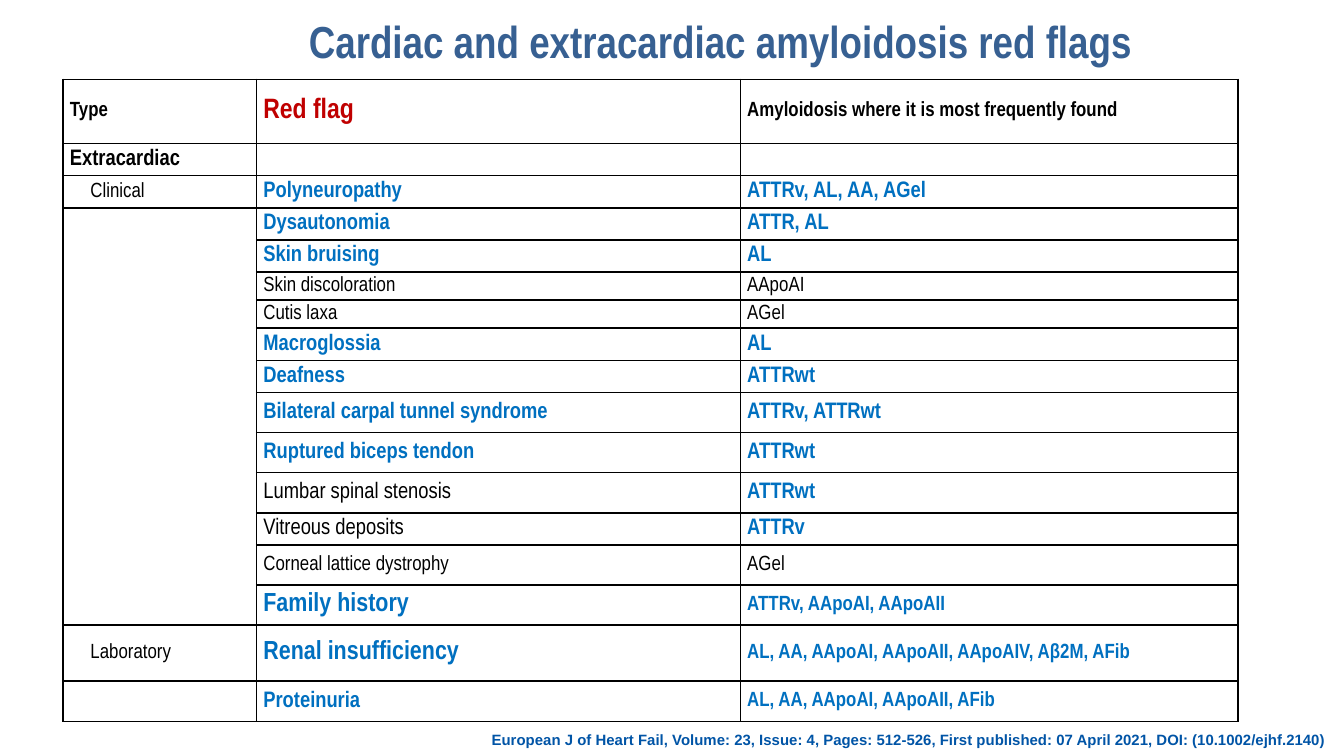
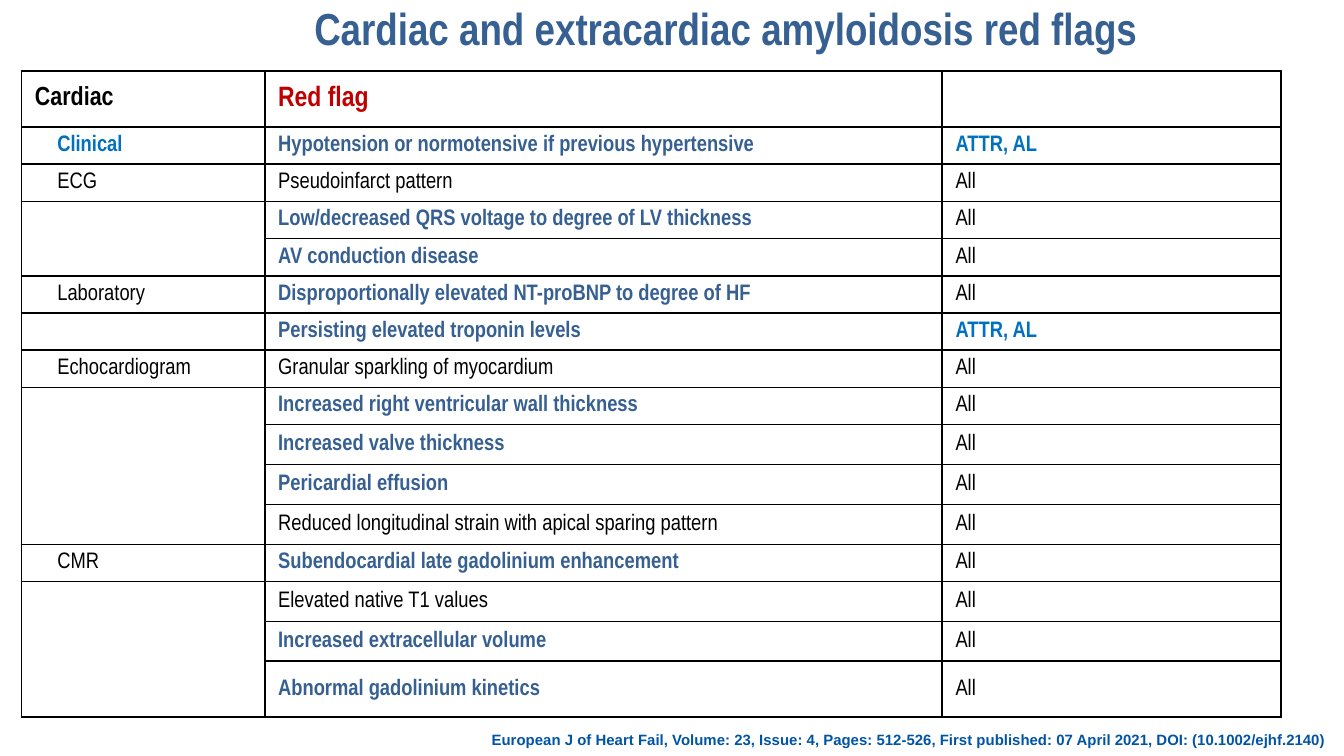
from collections import namedtuple
from itertools import groupby

from lxml import etree
from pptx import Presentation
from pptx.dml.color import RGBColor
from pptx.enum.text import MSO_ANCHOR, PP_ALIGN
from pptx.oxml.ns import qn
from pptx.util import Inches, Pt

MIDDLE, TOP = MSO_ANCHOR.MIDDLE, MSO_ANCHOR.TOP
CENTER, RIGHT = PP_ALIGN.CENTER, PP_ALIGN.RIGHT

BLACK = RGBColor(0x00, 0x00, 0x00)
WHITE = RGBColor(0xFF, 0xFF, 0xFF)
NAVY = RGBColor(0x37, 0x60, 0x92)
BLUE = RGBColor(0x00, 0x70, 0xC0)
RED = RGBColor(0xC0, 0x00, 0x00)
CITATION_BLUE = RGBColor(0x00, 0x54, 0xA6)

NARROW = "Arial Narrow"
TITLE = "Cardiac and extracardiac amyloidosis red flags"
CITATION = ("European J of Heart Fail, Volume: 23, Issue: 4, Pages: 512-526, "
            "First published: 07 April 2021, DOI: (10.1002/ejhf.2140)")

Entry = namedtuple("Entry", "text size color bold indented")


def plain(text, size=12):
    """Describe a regular black entry."""
    return Entry(text, size, BLACK, False, False)


def strong(text, size=12, color=BLUE):
    """Describe a bold entry."""
    return Entry(text, size, color, True, False)


def group(text, size=12):
    """Describe an indented group label."""
    return plain(text, size)._replace(indented=True)


def navy(text):
    """Describe a bold navy red flag."""
    return strong(text, color=NAVY)


ALL = plain("All")

EXTRACARDIAC = [
    (0.48, strong("Type", 11, BLACK), strong("Red flag", 15, RED),
     strong("Amyloidosis where it is most frequently found", 11, BLACK)),
    (0.24, strong("Extracardiac", 12, BLACK), None, None),
    (0.24, group("Clinical", 11), strong("Polyneuropathy"), strong("ATTRv, AL, AA, AGel")),
    (0.24, None, strong("Dysautonomia"), strong("ATTR, AL")),
    (0.24, None, strong("Skin bruising"), strong("AL")),
    (0.21, None, plain("Skin discoloration", 11), plain("AApoAI", 11)),
    (0.21, None, plain("Cutis laxa", 11), plain("AGel", 11)),
    (0.24, None, strong("Macroglossia"), strong("AL")),
    (0.24, None, strong("Deafness"), strong("ATTRwt")),
    (0.3, None, strong("Bilateral carpal tunnel syndrome"), strong("ATTRv, ATTRwt")),
    (0.3, None, strong("Ruptured biceps tendon"), strong("ATTRwt")),
    (0.3, None, plain("Lumbar spinal stenosis"), strong("ATTRwt")),
    (0.24, None, plain("Vitreous deposits"), strong("ATTRv")),
    (0.3, None, plain("Corneal lattice dystrophy", 11), plain("AGel", 11)),
    (0.3, None, strong("Family history", 14), strong("ATTRv, AApoAI, AApoAII", 11)),
    (0.42, group("Laboratory", 11), strong("Renal insufficiency", 14),
     strong("AL, AA, AApoAI, AApoAII, AApoAIV, Aβ2M, AFib", 11)),
    (0.3, None, strong("Proteinuria"), strong("AL, AA, AApoAI, AApoAII, AFib", 11)),
]

CARDIAC = [
    (0.42, strong("Cardiac", 14, BLACK), strong("Red flag", 15, RED), None),
    (0.28, strong("Clinical")._replace(indented=True),
     navy("Hypotension or normotensive if previous hypertensive"), strong("ATTR, AL")),
    (0.28, group("ECG"), plain("Pseudoinfarct pattern"), ALL),
    (0.28, None, navy("Low/decreased QRS voltage to degree of LV thickness"), ALL),
    (0.28, None, navy("AV conduction disease"), ALL),
    (0.28, group("Laboratory"),
     navy("Disproportionally elevated NT-proBNP to degree of HF"), ALL),
    (0.28, None, navy("Persisting elevated troponin levels"), strong("ATTR, AL")),
    (0.28, group("Echocardiogram"), plain("Granular sparkling of myocardium"), ALL),
    (0.28, None, navy("Increased right ventricular wall thickness"), ALL),
    (0.3, None, navy("Increased valve thickness"), ALL),
    (0.3, None, navy("Pericardial effusion"), ALL),
    (0.3, None, plain("Reduced longitudinal strain with apical sparing pattern"), ALL),
    (0.28, group("CMR"), navy("Subendocardial late gadolinium enhancement"), ALL),
    (0.3, None, plain("Elevated native T1 values"), ALL),
    (0.3, None, navy("Increased extracellular volume"), ALL),
    (0.42, None, navy("Abnormal gadolinium kinetics"), ALL),
]


def add_run(paragraph, text, font_name, size, color, bold):
    """Append one formatted run."""
    run = paragraph.add_run()
    run.text = text
    run.font.name = font_name
    run.font.size = Pt(size)
    run.font.color.rgb = color
    run.font.bold = bold


def add_line(slide, box, text, font_name, size, color, align, anchor):
    """Place one bold line of text in the given box."""
    frame = slide.shapes.add_textbox(*map(Inches, box)).text_frame
    frame.word_wrap = True
    frame.vertical_anchor = anchor
    paragraph = frame.paragraphs[0]
    paragraph.alignment = align
    add_run(paragraph, text, font_name, size, color, True)
    return frame


def add_title(slide, box):
    """Place the shared title."""
    add_line(slide, box, TITLE, NARROW, 24, NAVY, CENTER, MIDDLE)


def add_citation(slide, box):
    """Place the shared source line."""
    frame = add_line(slide, box, CITATION, "Arial", 8, CITATION_BLUE, RIGHT, TOP)
    frame.margin_right = Inches(0.13)


def add_borders(cell):
    """Draw a thin black line on each side of a cell."""
    properties = cell._tc.get_or_add_tcPr()
    for side in ("a:lnL", "a:lnR", "a:lnT", "a:lnB"):
        line = etree.SubElement(properties, qn(side), w=str(Pt(1)))
        fill = etree.SubElement(line, qn("a:solidFill"))
        etree.SubElement(fill, qn("a:srgbClr"), val=str(BLACK))


def fill_cell(cell, entry, margin):
    """Format a cell and write its entry."""
    add_borders(cell)
    cell.fill.solid()
    cell.fill.fore_color.rgb = WHITE
    cell.vertical_anchor = MIDDLE
    cell.margin_left = cell.margin_right = Inches(margin[0])
    cell.margin_top = cell.margin_bottom = Inches(margin[1])
    paragraph = cell.text_frame.paragraphs[0]
    if entry is None:
        etree.SubElement(paragraph._p, qn("a:endParaRPr"), sz="1000")
        return
    if entry.indented:
        paragraph._p.get_or_add_pPr().set("marL", str(Pt(entry.size)))
    add_run(paragraph, entry.text, NARROW, entry.size, entry.color, entry.bold)


def merge_empty_groups(table, rows):
    """Merge neighbouring empty cells in the first column."""
    for empty, members in groupby(range(len(rows)), lambda i: rows[i][1] is None):
        members = list(members)
        if empty and len(members) > 1:
            table.cell(members[0], 0).merge(table.cell(members[-1], 0))


def add_flag_table(slide, corner, widths, total_height, rows, margin):
    """Place a table of red flags, sharing its height among the rows."""
    scale = total_height / sum(row[0] for row in rows)
    box = map(Inches, (*corner, sum(widths), total_height))
    table = slide.shapes.add_table(len(rows), len(widths), *box).table
    table.first_row = table.horz_banding = False
    for column, width in zip(table.columns, widths):
        column.width = Inches(width)
    for r, (height, *entries) in enumerate(rows):
        table.rows[r].height = Inches(height * scale)
        for c, entry in enumerate(entries):
            fill_cell(table.cell(r, c), entry, margin)
    merge_empty_groups(table, rows)


def add_flag_slide(deck, title_box, corner, widths, total_height, rows, margin):
    """Build one slide with title, table and source line."""
    slide = deck.slides.add_slide(deck.slide_layouts[6])
    add_title(slide, title_box)
    add_flag_table(slide, corner, widths, total_height, rows, margin)
    add_citation(slide, (3.36, 5.39, 6.64, 0.23))


def main():
    """Build and save the deck."""
    deck = Presentation()
    deck.slide_width = Inches(10)
    deck.slide_height = deck.slide_width * 9 // 16
    add_flag_slide(deck, (1.33, 0.12, 8.06, 0.36), (0.47, 0.59),
                   (1.44, 3.6, 3.7), 4.78, EXTRACARDIAC, (0.05, 0.01))
    add_flag_slide(deck, (1.33, 0, 8.14, 0.41), (0.16, 0.53),
                   (1.81, 5.04, 2.52), 4.81, CARDIAC, (0.1, 0.03))
    deck.save("out.pptx")


if __name__ == "__main__":
    main()
